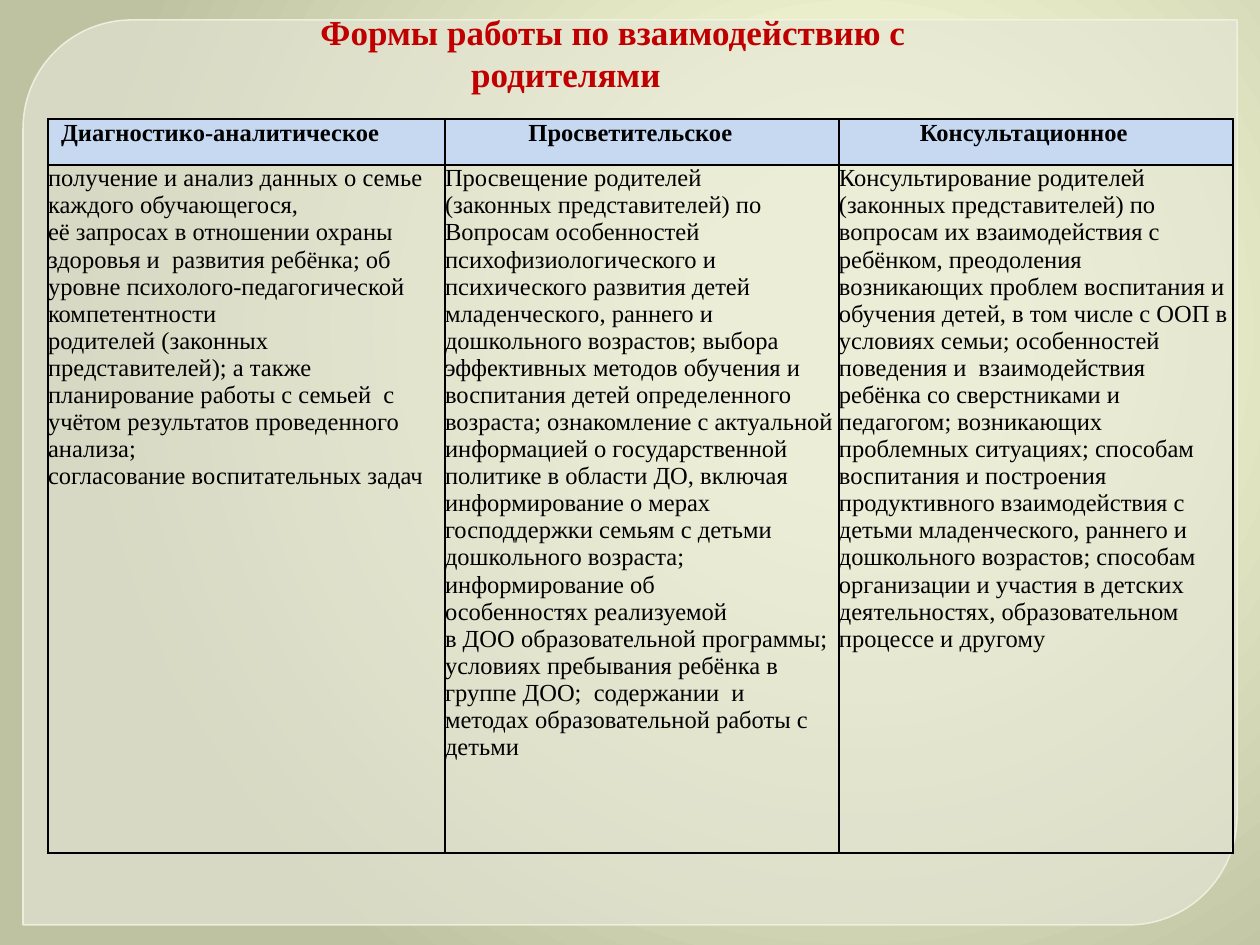
from itertools import accumulate, product
from lxml.etree import SubElement
from pptx import Presentation
from pptx.dml.color import RGBColor
from pptx.enum.shapes import MSO_SHAPE
from pptx.enum.text import MSO_ANCHOR, MSO_AUTO_SIZE, PP_ALIGN
from pptx.oxml import parse_xml
from pptx.oxml.ns import nsdecls, qn
from pptx.util import Emu, Inches, Pt

RED = RGBColor(0xC0, 0x00, 0x00)
BLACK = RGBColor(0x00, 0x00, 0x00)
BLUE = RGBColor(0xC6, 0xD9, 0xF1)
PALE = RGBColor(0xE5, 0xE6, 0xD7)
EDGE = RGBColor(0xF2, 0xF4, 0xE2)
GLOW = [
    (0, RGBColor(0xFB, 0xFE, 0xD9)),
    (20, RGBColor(0xF9, 0xFC, 0xD8)),
    (100, RGBColor(0xBF, 0xC2, 0xA1)),
]
FONT = "Times New Roman"
SCALE = Inches(1) / 126

TITLE = "Формы работы по взаимодействию с родителями"
COLS = [397, 170, 8, 39, 131, 46, 257, 98, 39]
ROWS = [28, 18, 607, 81]
SPANS = [1, 5, 3]
HEADS = [
    ("Диагностико-аналитическое", PP_ALIGN.LEFT, 13),
    ("Просветительское", PP_ALIGN.CENTER, 23),
    ("Консультационное", PP_ALIGN.CENTER, 15),
]
BODIES = [
    [
        "получение и анализ данных о семье каждого обучающегося,",
        "её запросах в отношении охраны  здоровья и  развития ребёнка; об "
        "уровне психолого-педагогической компетентности",
        "родителей (законных  представителей); а также планирование работы "
        "с семьей  с  учётом результатов проведенного анализа;",
        "согласование воспитательных задач",
    ],
    [
        "Просвещение родителей",
        "(законных представителей) по",
        "Вопросам особенностей",
        "психофизиологического и  психического развития детей младенческого, "
        "раннего и дошкольного возрастов; выбора эффективных методов обучения "
        "и воспитания детей определенного возраста; ознакомление с актуальной "
        "информацией о государственной политике в области ДО, включая "
        "информирование о мерах",
        "господдержки семьям с детьми дошкольного возраста; информирование об",
        "особенностях реализуемой",
        "в ДОО образовательной программы; условиях пребывания ребёнка в группе "
        "ДОО;  содержании  и  методах образовательной работы с детьми",
    ],
    [
        "Консультирование родителей (законных представителей) по вопросам их "
        "взаимодействия с ребёнком, преодоления возникающих проблем воспитания "
        "и обучения детей, в том числе с ООП в условиях семьи; особенностей "
        "поведения и  взаимодействия ребёнка со сверстниками и педагогом; "
        "возникающих проблемных ситуациях; способам воспитания и построения "
        "продуктивного взаимодействия с детьми младенческого, раннего и "
        "дошкольного возрастов; способам организации и участия в детских "
        "деятельностях, образовательном процессе и другому",
    ],
]


def px(num):
    """Turn whole pixels into EMU."""
    return Emu(round(num * SCALE))


def style(para, size, color, bold):
    """Set the font of a whole paragraph."""
    font = para.font
    font.name, font.size, font.bold = FONT, Pt(size), bold
    font.color.rgb = color


def fade(fill, part):
    """Give a solid fill its opacity in percent."""
    tint = fill._xPr.find(qn("a:solidFill"))[0]
    SubElement(tint, qn("a:alpha"), val=str(part * 1000))


def paint(slide):
    """Lay a round gradient behind the slide."""
    stops = "".join(
        f'<a:gs pos="{pos * 1000}"><a:srgbClr val="{tone}"/></a:gs>'
        for pos, tone in GLOW
    )
    back = parse_xml(
        f'<p:bg {nsdecls("p", "a")}><p:bgPr><a:gradFill rotWithShape="1">'
        f'<a:gsLst>{stops}</a:gsLst><a:path path="circle">'
        '<a:fillToRect l="68000" t="35000" r="32000" b="65000"/></a:path>'
        "</a:gradFill><a:effectLst/></p:bgPr></p:bg>"
    )
    slide.element.cSld.insert(0, back)


def add_panel(slide, left, top, width, height):
    """Draw the clear panel behind all other parts."""
    panel = slide.shapes.add_shape(
        MSO_SHAPE.ROUND_2_DIAG_RECTANGLE, *map(px, (left, top, width, height))
    )
    panel.adjustments[0], panel.adjustments[1] = 0.12, 0
    panel.shadow.inherit = False
    panel.fill.solid()
    panel.fill.fore_color.rgb = PALE
    fade(panel.fill, 65)
    panel.line.width = Pt(0.87)
    panel.line.color.rgb = EDGE
    fade(panel.line.fill, 88)
    slide.shapes._spTree.insert(2, panel._element)


def add_title(slide, left, top, width, height):
    """Place the title with its first line indented."""
    title = slide.shapes.title
    title.left, title.top = px(left), px(top)
    title.width, title.height = px(width), px(height)
    frame = title.text_frame
    frame.text = TITLE
    frame.word_wrap = True
    frame.auto_size = MSO_AUTO_SIZE.NONE
    frame.vertical_anchor = MSO_ANCHOR.BOTTOM
    para = frame.paragraphs[0]
    para.alignment = PP_ALIGN.CENTER
    para.line_spacing = Pt(24)
    para._p.get_or_add_pPr().set("marL", str(px(8)))
    para._p.get_or_add_pPr().set("indent", str(px(94)))
    style(para, 20, RED, True)


def rule(cell, sides):
    """Draw black borders on the flagged sides and clear the rest."""
    props = cell._tc.get_or_add_tcPr()
    ink = f'<a:solidFill><a:srgbClr val="{BLACK}"/></a:solidFill>'
    for spot, (side, drawn) in enumerate(zip("LRTB", sides)):
        props.insert(spot, parse_xml(
            f'<a:ln{side} {nsdecls("a")} w="{Pt(1)}">'
            f'{ink if drawn else "<a:noFill/>"}</a:ln{side}>'
        ))


def write(cell, lines, bold, align=PP_ALIGN.LEFT, left=0):
    """Write the lines of one cell."""
    cell.text = "\n".join(lines)
    cell.margin_left = px(left)
    cell.vertical_anchor = MSO_ANCHOR.BOTTOM if bold else MSO_ANCHOR.TOP
    for para in cell.text_frame.paragraphs:
        para.alignment = align
        style(para, 14, BLACK, bold)


def frame_block(table, top, first, last):
    """Fill a block two rows high and border its outer edge."""
    for row, col in product((top, top + 1), range(first, last + 1)):
        cell = table.cell(row, col)
        cell.margin_left = cell.margin_right = 0
        cell.margin_top = cell.margin_bottom = 0
        if top == 0:
            cell.fill.solid()
            cell.fill.fore_color.rgb = BLUE
        else:
            cell.fill.background()
        wide, high = (
            (cell.span_width, cell.span_height) if cell.is_merge_origin else (1, 1)
        )
        rule(cell, (col == first, col + wide > last,
                    row == top, row + high > top + 1))
        end = cell.text_frame.paragraphs[0]._p
        SubElement(end, qn("a:endParaRPr"), sz="600")


def add_grid(slide, left, top):
    """Place the table with three groups of columns."""
    box = map(px, (left, top, sum(COLS), sum(ROWS)))
    table = slide.shapes.add_table(len(ROWS), len(COLS), *box).table
    table.first_row = table.horz_banding = False
    for part, size in zip(table.rows, ROWS):
        part.height = px(size)
    for part, size in zip(table.columns, COLS):
        part.width = px(size)
    for end, span, head, lines in zip(accumulate(SPANS), SPANS, HEADS, BODIES):
        first, last = end - span, end - 1
        if span > 1:
            table.cell(0, first).merge(table.cell(0, last - 1))
            table.cell(2, first).merge(table.cell(3, last))
        frame_block(table, 0, first, last)
        frame_block(table, 2, first, last)
        name, align, start = head
        write(table.cell(0, first), [name], True, align, start)
        write(table.cell(2, first), lines, False)


def main():
    """Build the slide and save it."""
    deck = Presentation()
    deck.slide_width, deck.slide_height = px(1260), px(945)
    slide = deck.slides.add_slide(deck.slide_layouts[5])
    paint(slide)
    add_panel(slide, 23, 20, 1214, 905)
    add_title(slide, 121, 21, 882, 80)
    add_grid(slide, 48, 119)
    deck.save("out.pptx")


if __name__ == "__main__":
    main()
